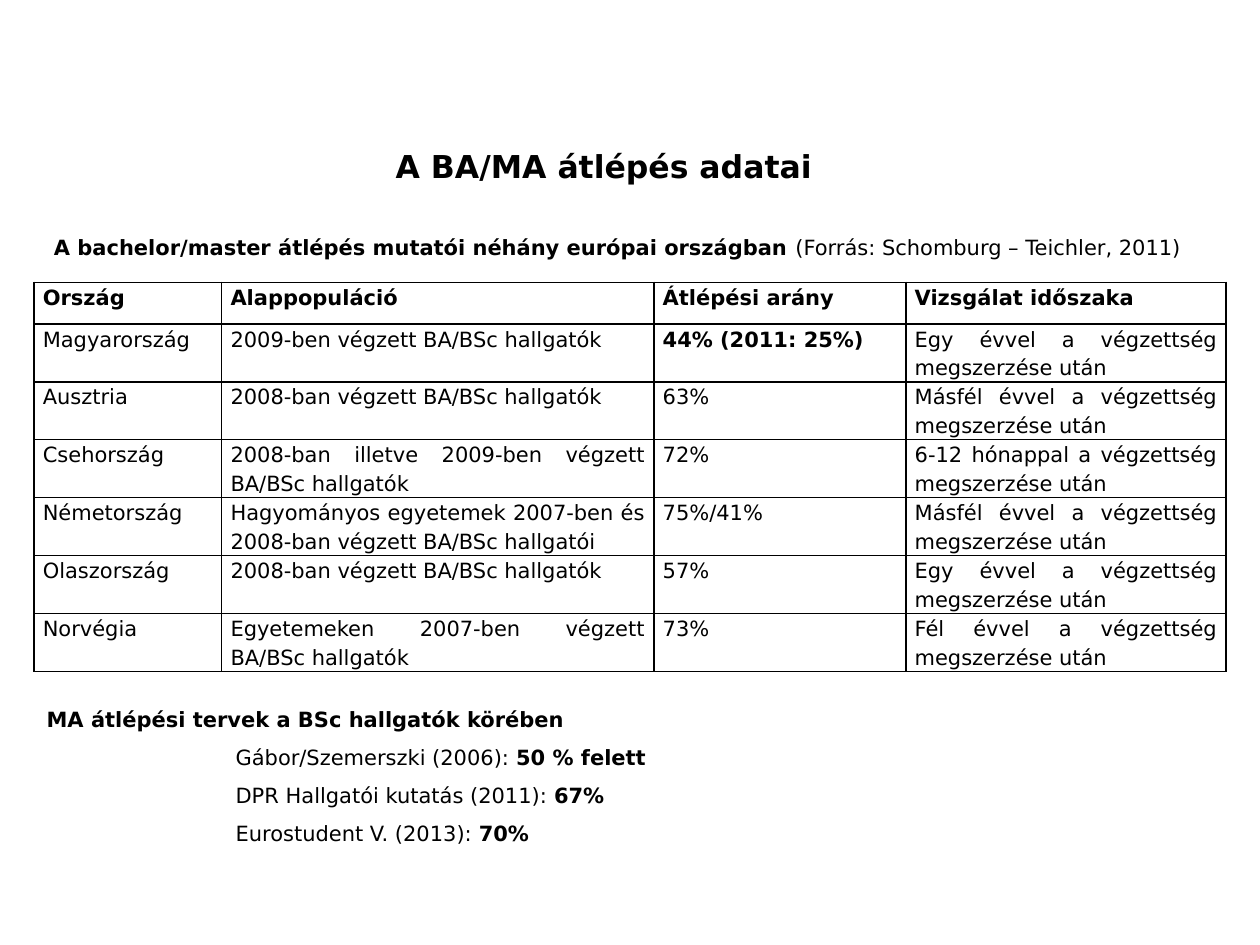
from dataclasses import dataclass

import pptx
import pptx.dml.color
import pptx.enum.text
import pptx.oxml
import pptx.util
from pptx.oxml.ns import qn

ANCHOR = pptx.enum.text.MSO_ANCHOR
ALIGN = pptx.enum.text.PP_ALIGN
WIDTH, HEIGHT = 10, 7.5


@dataclass(frozen=True)
class Theme:
    font: str = "DejaVu Sans"
    ink: str = "000000"
    paper: str = "FFFFFF"
    title_size: int = 18
    text_size: int = 12
    border_width: int = 1


THEME = Theme()

TITLE = "A BA/MA átlépés adatai"
CAPTION = [("A bachelor/master átlépés mutatói néhány európai országban ", True),
           ("(Forrás: Schomburg – Teichler, 2011)", False)]
HEADER = ["Ország", "Alappopuláció", "Átlépési arány", "Vizsgálat időszaka"]
AFTER_DEGREE = "végzettség megszerzése után"
COUNTRIES = [
    ("Magyarország", "2009-ben végzett BA/BSc hallgatók", "44% (2011: 25%)", "Egy évvel a"),
    ("Ausztria", "2008-ban végzett BA/BSc hallgatók", "63%", "Másfél évvel a"),
    ("Csehország", "2008-ban illetve 2009-ben végzett BA/BSc hallgatók", "72%",
     "6-12 hónappal a"),
    ("Németország", "Hagyományos egyetemek 2007-ben és 2008-ban végzett BA/BSc hallgatói",
     "75%/41%", "Másfél évvel a"),
    ("Olaszország", "2008-ban végzett BA/BSc hallgatók", "57%", "Egy évvel a"),
    ("Norvégia", "Egyetemeken 2007-ben végzett BA/BSc hallgatók", "73%", "Fél évvel a"),
]
HIGHLIGHT = (1, 2)
PLANS_HEADING = "MA átlépési tervek a BSc hallgatók körében"
PLANS = [("Gábor/Szemerszki (2006): ", "50 % felett"),
         ("DPR Hallgatói kutatás (2011): ", "67%"),
         ("Eurostudent V. (2013): ", "70%")]

COLUMN_WIDTHS = [1.49, 3.43, 2, 2.54]
HEADER_HEIGHT, ROW_HEIGHT = 0.33, 0.46


def inches(*lengths):
    return [pptx.util.Inches(length) for length in lengths]


def place(shape, left, top, width, height):
    shape.left, shape.top, shape.width, shape.height = inches(left, top, width, height)


def set_font(font, size, bold=None):
    font.name = THEME.font
    font.size = pptx.util.Pt(size)
    font.bold = bold
    font.color.rgb = pptx.dml.color.RGBColor.from_string(THEME.ink)


def add_spans(para, spans):
    """Add (text, bold) spans to a paragraph."""
    for text, bold in spans:
        span = para.add_run()
        span.text = text
        span.font.bold = bold


def set_title(slide):
    title = slide.shapes.title
    place(title, 3.04, 1.12, 5.29, 0.45)
    title.text_frame.auto_size = pptx.enum.text.MSO_AUTO_SIZE.NONE
    title.text_frame.vertical_anchor = ANCHOR.TOP
    para = title.text_frame.paragraphs[0]
    para.text = TITLE
    para.alignment = ALIGN.LEFT
    set_font(para.font, THEME.title_size, True)


def add_caption(slide):
    box = slide.shapes.add_textbox(*inches(0.33, 1.81, 9.41, 0.3))
    box.text_frame.word_wrap = True
    box.text_frame.vertical_anchor = ANCHOR.MIDDLE
    para = box.text_frame.paragraphs[0]
    para.alignment = ALIGN.JUSTIFY
    set_font(para.font, THEME.text_size)
    add_spans(para, CAPTION)


def add_borders(cell):
    """Line all four sides; the lines must stand before the fill."""
    properties = cell._tc.get_or_add_tcPr()
    for index, side in enumerate(("lnL", "lnR", "lnT", "lnB")):
        line = pptx.oxml.parse_xml(
            f'<a:{side} xmlns:a="http://schemas.openxmlformats.org/drawingml/2006/main" '
            f'w="{pptx.util.Pt(THEME.border_width)}"><a:solidFill>'
            f'<a:srgbClr val="{THEME.ink}"/></a:solidFill></a:{side}>')
        properties.insert(index, line)


def fill_cell(cell, text, bold):
    cell.margin_left = cell.margin_right = pptx.util.Inches(0.07)
    cell.margin_top = cell.margin_bottom = 0
    cell.fill.solid()
    cell.fill.fore_color.rgb = pptx.dml.color.RGBColor.from_string(THEME.paper)
    add_borders(cell)
    para = cell.text_frame.paragraphs[0]
    para.text = text
    para.alignment = ALIGN.JUSTIFY
    para.line_spacing = 1.15
    set_font(para.font, THEME.text_size, bold)


def add_country_table(slide):
    rows = [HEADER] + [(*country, f"{period} {AFTER_DEGREE}")
                       for *country, period in COUNTRIES]
    heights = [HEADER_HEIGHT] + [ROW_HEIGHT] * len(COUNTRIES)
    frame = slide.shapes.add_table(
        len(rows), len(HEADER), *inches(0.27, 2.24, sum(COLUMN_WIDTHS), sum(heights)))
    table = frame.table
    table.first_row = table.horz_banding = False
    for column, width in zip(table.columns, COLUMN_WIDTHS):
        column.width = pptx.util.Inches(width)
    for row_index, (row, height) in enumerate(zip(rows, heights)):
        table.rows[row_index].height = pptx.util.Inches(height)
        for column_index, text in enumerate(row):
            bold = row_index == 0 or (row_index, column_index) == HIGHLIGHT
            fill_cell(table.cell(row_index, column_index), text, bold)


def format_plan(para, level, indent):
    para.level = level
    properties = para._p.get_or_add_pPr()
    properties.set("marL", str(pptx.util.Inches(indent)))
    properties.set("indent", "0")
    para.line_spacing = 1.5
    para.space_before = pptx.util.Pt(0)
    properties.append(properties.makeelement(qn("a:buNone"), {}))
    set_font(para.font, THEME.text_size)


def set_plans(slide):
    body = slide.placeholders[1]
    place(body, 0.27, 5.46, 8.81, 1.29)
    frame = body.text_frame
    frame.auto_size = pptx.enum.text.MSO_AUTO_SIZE.NONE
    heading = frame.paragraphs[0]
    format_plan(heading, 0, 0)
    add_spans(heading, [(PLANS_HEADING, True)])
    for source, share in PLANS:
        para = frame.add_paragraph()
        format_plan(para, 3, 1.5)
        add_spans(para, [(source, False), (share, True)])


def main():
    deck = pptx.Presentation()
    deck.slide_width, deck.slide_height = inches(WIDTH, HEIGHT)
    slide = deck.slides.add_slide(deck.slide_layouts[1])
    set_title(slide)
    set_plans(slide)
    add_country_table(slide)
    add_caption(slide)
    deck.save("out.pptx")


if __name__ == "__main__":
    main()
